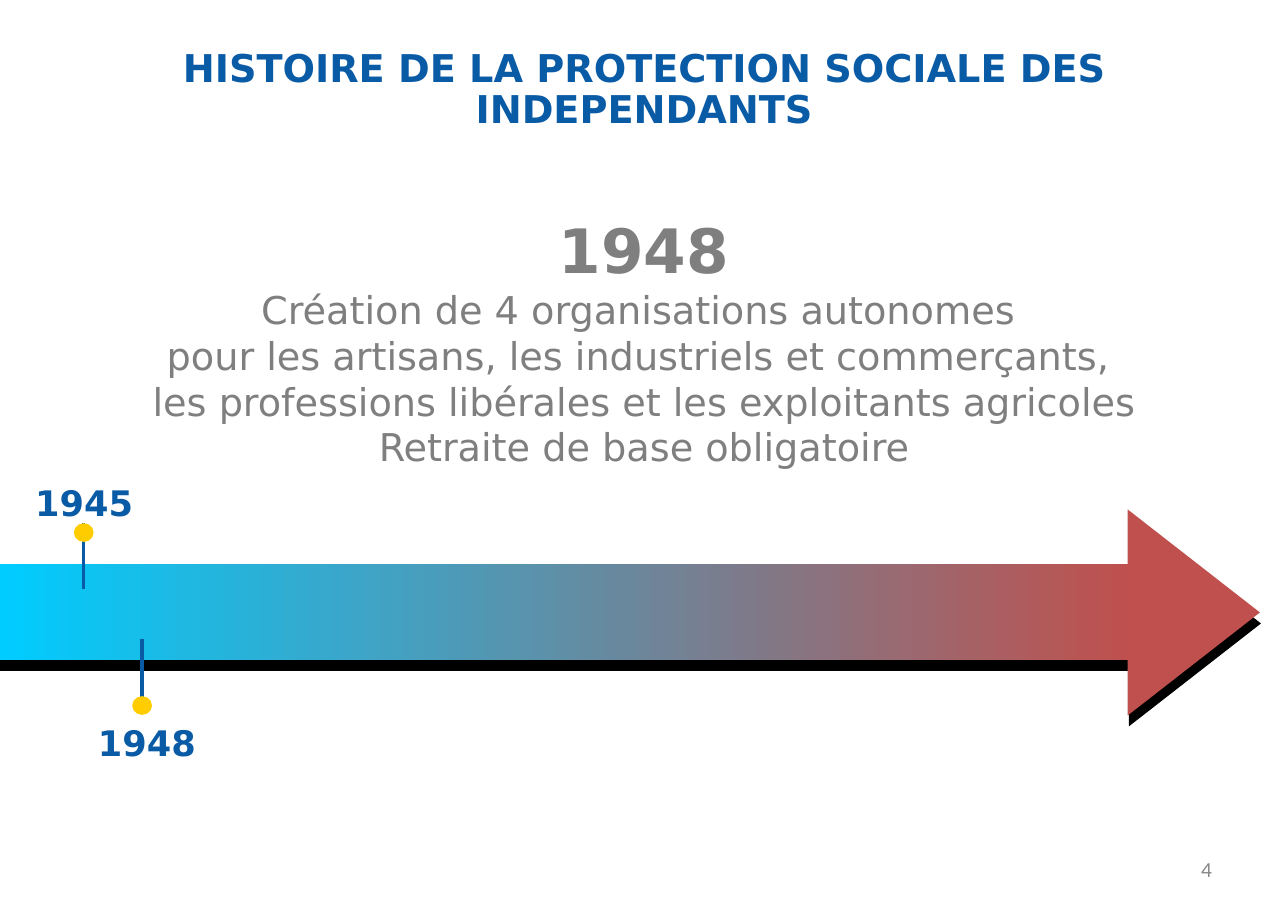
import pptx
import pptx.dml.color
import pptx.enum.shapes
import pptx.enum.text
import pptx.oxml.ns
import pptx.util
from lxml import etree
from pptx.util import Inches

COLORS = {
    "blue": "095BA6", "grey": "7F7F7F", "number": "898989", "black": "000000",
    "red": "C0504D", "cyan": "00CCFF", "yellow": "FFCC00",
}
FONT = "DejaVu Sans"
SHAPE = pptx.enum.shapes.MSO_SHAPE
ALIGN = pptx.enum.text.PP_ALIGN
ANCHOR = pptx.enum.text.MSO_ANCHOR


def rgb(name):
    return pptx.dml.color.RGBColor.from_string(COLORS[name])


def set_frame(tf, wrap=True, anchor=ANCHOR.TOP):
    tf.auto_size = pptx.enum.text.MSO_AUTO_SIZE.NONE
    tf.word_wrap = wrap
    tf.vertical_anchor = anchor
    tf.margin_left = tf.margin_right = Inches(0.11)
    tf.margin_top = tf.margin_bottom = Inches(0.06)


def format_paragraph(p, size, color, bold=False, align=ALIGN.CENTER, font=FONT):
    p.alignment = align
    for r in p.runs:
        r.font.name = font
        r.font.size = pptx.util.Pt(size)
        r.font.bold = bold
        r.font.color.rgb = rgb(color)


def add_text(s, box, text, wrap=True, anchor=ANCHOR.TOP):
    tf = s.shapes.add_textbox(*map(Inches, box)).text_frame
    set_frame(tf, wrap, anchor)
    tf.text = text
    return tf


def add_shape(s, kind, box, color):
    sp = s.shapes.add_shape(kind, *map(Inches, box))
    sp.shadow.inherit = False
    sp.line.fill.background()
    sp.fill.solid()
    sp.fill.fore_color.rgb = rgb(color)
    return sp


def add_arrow(s, left, top, color):
    """Add a head and a shaft, and return the shaft."""
    head = add_shape(s, SHAPE.ISOSCELES_TRIANGLE, (left + 9.91, top - 0.16, 1.87, 1.2), color)
    head.rotation = 90
    return add_shape(s, SHAPE.RECTANGLE, (left, top, 10.32, 0.87), color)


def add_marker(s, year, x, line_top, dot_top, label_left, label_top):
    line = s.shapes.add_connector(
        pptx.enum.shapes.MSO_CONNECTOR.STRAIGHT,
        Inches(x), Inches(line_top + 0.6), Inches(x), Inches(line_top))
    line.line.color.rgb = rgb("blue")
    line.line.width = pptx.util.Pt(2.25)
    etree.SubElement(line.element.spPr, pptx.oxml.ns.qn("a:effectLst"))
    add_shape(s, SHAPE.OVAL, (x - 0.09, dot_top, 0.18, 0.17), "yellow")
    tf = add_text(s, (label_left, label_top, 1.14, 0.5), year, wrap=False)
    format_paragraph(tf.paragraphs[0], 23, "blue", True, ALIGN.LEFT)


def add_title(s, text):
    sp = s.shapes.title
    sp.left, sp.top, sp.width, sp.height = map(Inches, (0, 0.39, 11.69, 0.86))
    set_frame(sp.text_frame)
    sp.text_frame.text = text
    p = sp.text_frame.paragraphs[0]
    p.line_spacing = 0.9
    format_paragraph(p, 25, "blue", True)


def main():
    prs = pptx.Presentation()
    prs.slide_width, prs.slide_height = Inches(11.69), Inches(8.27)
    s = prs.slides.add_slide(prs.slide_layouts[5])
    add_title(s, "HISTOIRE DE LA PROTECTION SOCIALE DES INDEPENDANTS")

    # Event described on this slide
    tf = add_text(s, (0, 1.87, 11.69, 2.45), "\n".join([
        "1948",
        "Création de 4 organisations autonomes \v"
        "pour les artisans, les industriels et commerçants, ",
        "les professions libérales et les exploitants agricoles",
        "Retraite de base obligatoire",
    ]))
    year, *details = tf.paragraphs
    format_paragraph(year, 40, "grey", True)
    for p in details:
        format_paragraph(p, 25, "grey")

    # Timeline arrow over its black shadow
    add_arrow(s, 0, 5.22, "black")
    shaft = add_arrow(s, -0.01, 5.12, "red")
    shaft.fill.gradient()
    shaft.fill.gradient_angle = 0
    for stop, color in zip(shaft.fill.gradient_stops, ("cyan", "red")):
        stop.color.rgb = rgb(color)

    # Dates above and below the arrow
    add_marker(s, "1945", 0.76, 4.75, 4.75, 0.21, 4.31)
    add_marker(s, "1948", 1.29, 5.8, 6.32, 0.78, 6.49)

    # Slide number
    tf = add_text(s, (8.38, 7.67, 2.73, 0.44), "4", anchor=ANCHOR.MIDDLE)
    format_paragraph(tf.paragraphs[0], 14, "number", align=ALIGN.RIGHT, font="Calibri")

    prs.save("out.pptx")


if __name__ == "__main__":
    main()
